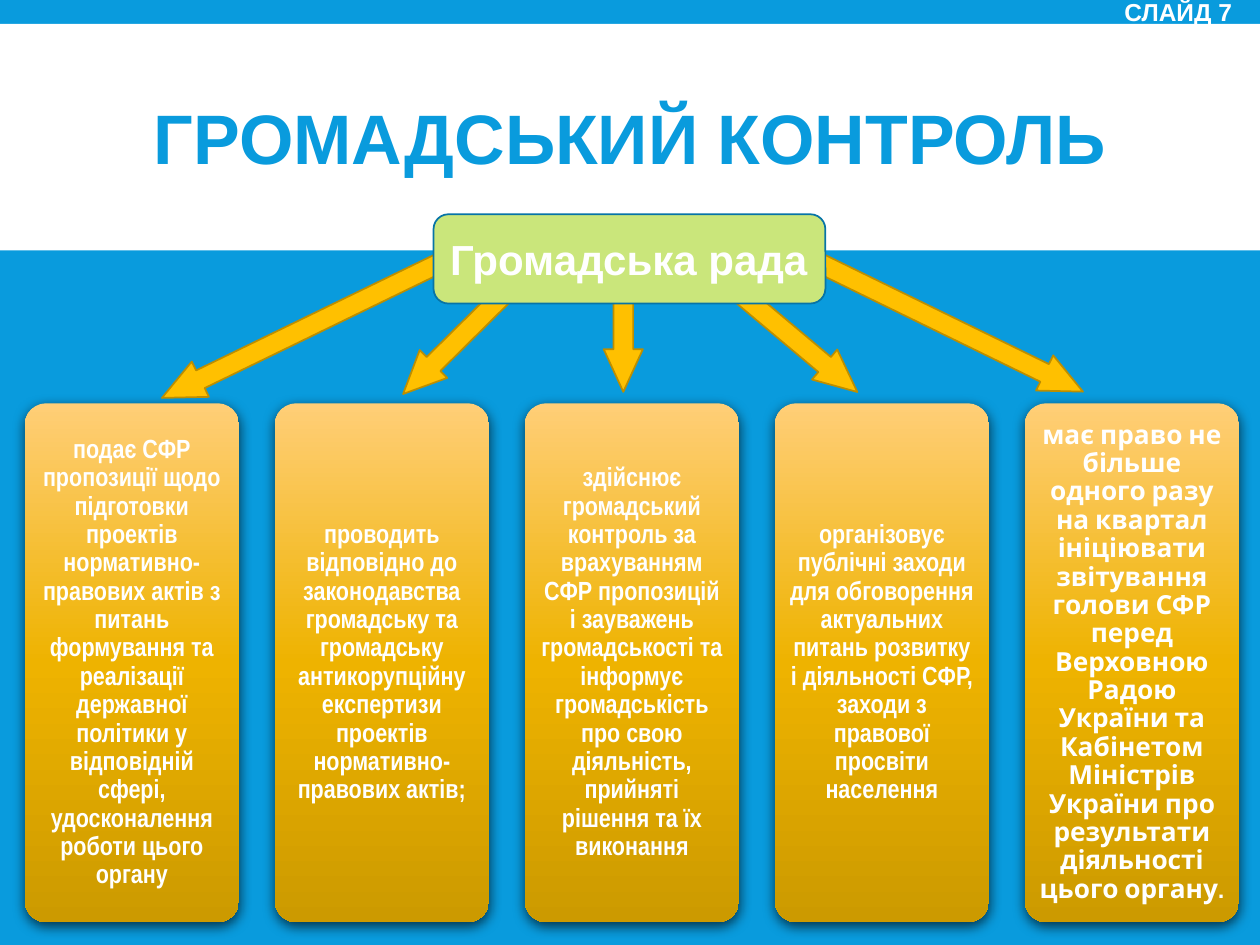
from copy import deepcopy

from lxml.etree import SubElement
from pptx import Presentation
from pptx.dml.color import RGBColor
from pptx.enum.shapes import MSO_SHAPE
from pptx.enum.text import MSO_ANCHOR, MSO_AUTO_SIZE, PP_ALIGN
from pptx.oxml.ns import qn
from pptx.util import Cm, Pt

BLUE = "099BDD"
WHITE = "FFFFFF"


def color(hex_string):
    return RGBColor.from_string(hex_string)


def write(shape, text, size, text_color, alignment, line_spacing, font_name="Arial"):
    frame = shape.text_frame
    frame.word_wrap = True
    frame.auto_size = MSO_AUTO_SIZE.NONE
    frame.vertical_anchor = MSO_ANCHOR.MIDDLE
    paragraph = frame.paragraphs[0]
    paragraph.text = text
    paragraph.alignment = alignment
    paragraph.line_spacing = line_spacing
    paragraph.font.name = font_name
    paragraph.font.size = Pt(size)
    paragraph.font.bold = True
    paragraph.font.color.rgb = color(text_color)


presentation = Presentation()
presentation.slide_width = Cm(25.4)
presentation.slide_height = Cm(19.05)
slide = presentation.slides.add_slide(presentation.slide_layouts[5])
slide.background.fill.solid()
slide.background.fill.fore_color.rgb = color(BLUE)
shapes = slide.shapes

band = shapes.add_shape(MSO_SHAPE.RECTANGLE, 0, Cm(0.48), Cm(25.4), Cm(4.57))
band.shadow.inherit = False
band.fill.solid()
band.fill.fore_color.rgb = color(WHITE)
band.line.fill.background()

title = shapes.title
title.left, title.top, title.width, title.height = Cm(1.9), Cm(0.79), Cm(21.6), Cm(4.19)
write(title, "ГРОМАДСЬКИЙ КОНТРОЛЬ", 40, BLUE, PP_ALIGN.CENTER, 0.85)
band._element.addnext(title._element)

cards = [
    ("подає СФР пропозиції щодо підготовки проектів нормативно-правових актів "
     "з питань формування та реалізації державної політики у відповідній сфері, "
     "удосконалення роботи цього органу", "Arial Narrow"),
    ("проводить відповідно до законодавства громадську та громадську "
     "антикорупційну експертизи проектів нормативно-правових актів;", "Arial Narrow"),
    ("здійснює громадський контроль за врахуванням СФР пропозицій і зауважень "
     "громадськості та інформує громадськість про свою діяльність, прийняті "
     "рішення та їх виконання", "Arial Narrow"),
    ("організовує публічні заходи для обговорення актуальних питань розвитку "
     "і діяльності СФР, заходи з правової просвіти населення", "Arial Narrow"),
    ("має право не більше одного разу на квартал ініціювати звітування голови "
     "СФР перед Верховною Радою України та Кабінетом Міністрів України про "
     "результати діяльності цього органу.", "Cabin"),
]
for index, (text, font_name) in enumerate(cards):
    card = shapes.add_shape(
        MSO_SHAPE.ROUNDED_RECTANGLE, Cm(0.5 + 5.04 * index), Cm(8.13), Cm(4.32), Cm(10.46)
    )
    card.adjustments[0] = 0.1
    card.line.fill.background()

    card.fill.gradient()
    card.fill.gradient_angle = 270
    first_stop = card._element.spPr.find(".//" + qn("a:gs"))
    middle_stop = deepcopy(first_stop)
    first_stop.addnext(middle_stop)
    for stop, position, stop_color in zip(
        card.fill.gradient_stops, (0, 0.5, 1), ("FFCE77", "EEB300", "CC9A00")
    ):
        stop.position = position
        stop.color.rgb = color(stop_color)

    card.shadow.inherit = False
    effects = card._element.spPr.find(qn("a:effectLst"))
    shadow = SubElement(
        effects, qn("a:outerShdw"), blurRad=str(Pt(7)), dist=str(Pt(2.2)),
        dir="5400000", algn="ctr", rotWithShape="0",
    )
    shadow_color = SubElement(shadow, qn("a:srgbClr"), val="000000")
    SubElement(shadow_color, qn("a:alpha"), val="63000")

    write(card, text, 15, WHITE, PP_ALIGN.CENTER, 0.9, font_name)
    frame = card.text_frame
    frame.margin_left = frame.margin_right = Cm(0.15)
    frame.margin_top = frame.margin_bottom = Cm(0.15)

arrows = [
    (5.92, 3.15, 6.78, 244.1),
    (9.14, 4.57, 3.96, 225.3),
    (15.37, 4.65, 3.96, 130),
    (18.39, 3.02, 6.78, 116),
    (12.17, 5.51, 2.39, 180),
]
for left, top, length, rotation in arrows:
    arrow = shapes.add_shape(MSO_SHAPE.UP_ARROW, Cm(left), Cm(top), Cm(0.79), Cm(length))
    arrow.adjustments[0] = 0.5
    arrow.adjustments[1] = 1.09
    arrow.rotation = rotation
    arrow.shadow.inherit = False
    arrow.fill.solid()
    arrow.fill.fore_color.rgb = color("FFC000")
    arrow.line.color.rgb = color("BD8E00")
    arrow.line.width = Pt(1)

slide_label = shapes.add_textbox(Cm(21.08), Cm(-0.38), Cm(4.01), Cm(1.32))
write(slide_label, "СЛАЙД 7", 14, WHITE, PP_ALIGN.RIGHT, 0.85)

council = shapes.add_shape(MSO_SHAPE.ROUNDED_RECTANGLE, Cm(8.74), Cm(4.32), Cm(7.9), Cm(1.8))
council.shadow.inherit = False
council.fill.solid()
council.fill.fore_color.rgb = color("CAE67B")
council.line.color.rgb = color("0774A6")
council.line.width = Pt(1)
write(council, "Громадська рада", 24, WHITE, PP_ALIGN.JUSTIFY, 1.0)

presentation.save("out.pptx")
